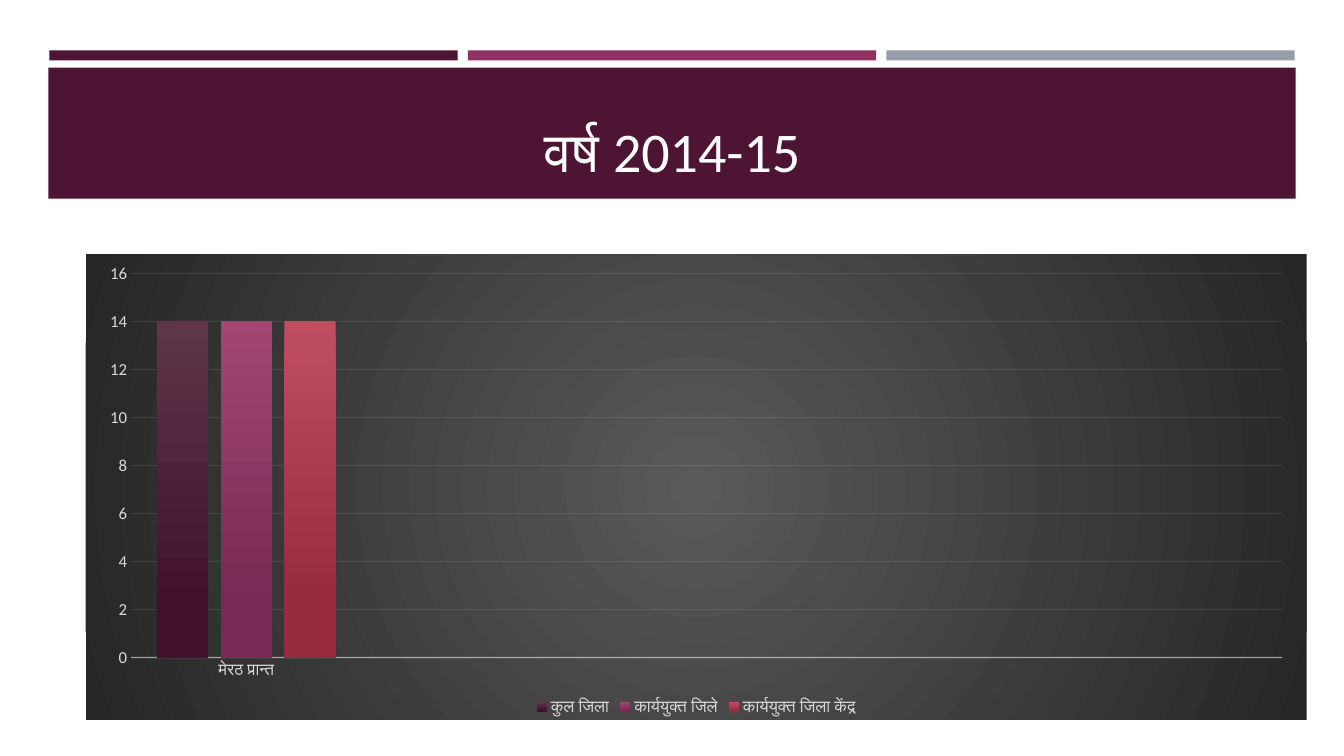
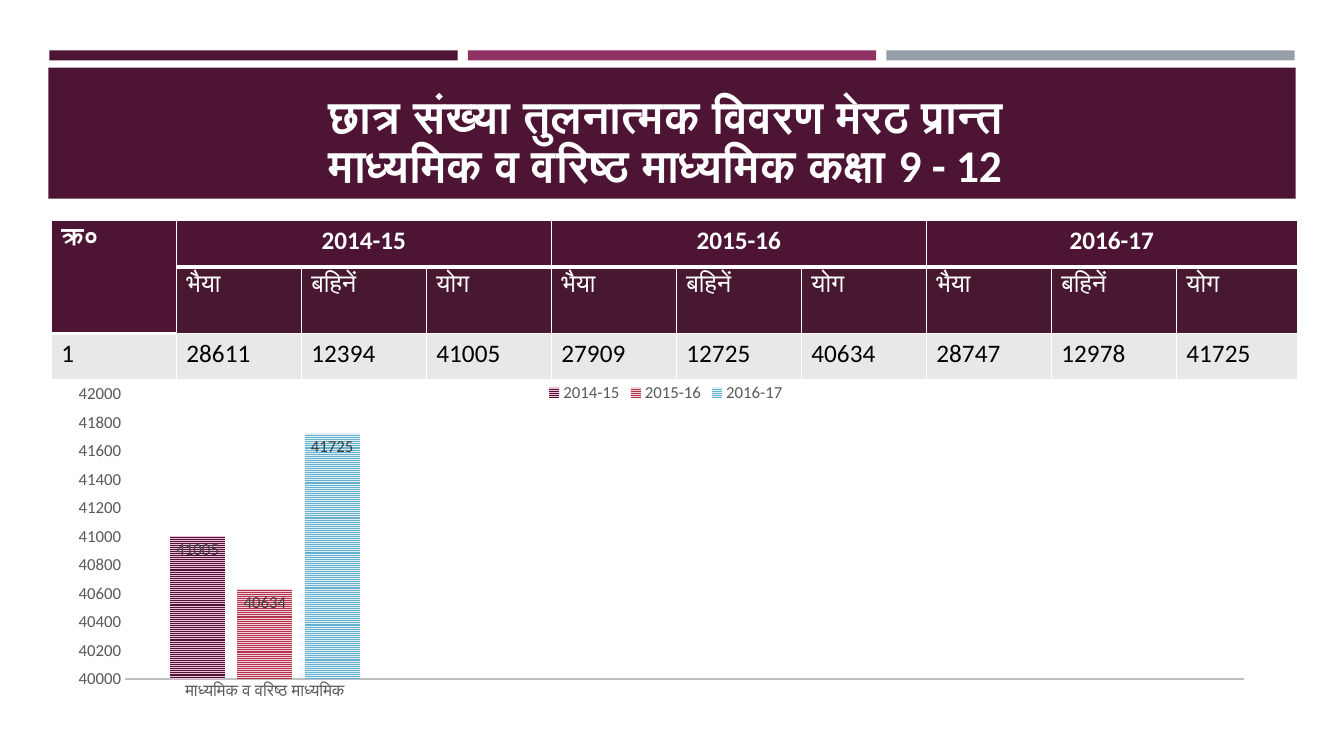
import pptx
import pptx.chart.data
import pptx.dml.color
import pptx.enum.chart
import pptx.enum.dml
import pptx.enum.shapes
import pptx.enum.text
import pptx.oxml
import pptx.oxml.ns
import pptx.util

Inches = pptx.util.Inches
Pt = pptx.util.Pt
RGBColor = pptx.dml.color.RGBColor
PP_ALIGN = pptx.enum.text.PP_ALIGN
ANCHOR = pptx.enum.text.MSO_ANCHOR
CHART = pptx.enum.chart

FONT = "Calibri"
PLUM = RGBColor(0x4D, 0x14, 0x34)
MAGENTA = RGBColor(0x90, 0x31, 0x63)
SLATE = RGBColor(0x96, 0x9F, 0xA7)
SUBHEAD = RGBColor(0x48, 0x18, 0x31)
ROW_TINT = RGBColor(0xE9, 0xE7, 0xE8)
WHITE = RGBColor(0xFF, 0xFF, 0xFF)
BLACK = RGBColor(0x00, 0x00, 0x00)
PALE = RGBColor(0xD9, 0xD9, 0xD9)
RULE = RGBColor(0xF2, 0xF2, 0xF2)
GREY = RGBColor(0x59, 0x59, 0x59)
AXIS_GREY = RGBColor(0xBF, 0xBF, 0xBF)
LABEL_GREY = RGBColor(0x40, 0x40, 0x40)
NIGHT = RGBColor(0x26, 0x26, 0x26)

DISTRICTS = [
    ("कुल जिला", 14, RGBColor(0x5F, 0x36, 0x49), RGBColor(0x41, 0x11, 0x2C)),
    ("कार्ययुक्त जिले", 14, RGBColor(0xA2, 0x47, 0x74), RGBColor(0x79, 0x29, 0x53)),
    ("कार्ययुक्त जिला केंद्र", 14, RGBColor(0xBF, 0x4E, 0x61), RGBColor(0x96, 0x2A, 0x3F)),
]
YEARS = [
    ("2014-15", (28611, 12394, 41005), PLUM, RGBColor(0xEE, 0xBD, 0xD9)),
    ("2015-16", (27909, 12725, 40634), RGBColor(0xB2, 0x32, 0x4B), RGBColor(0xF3, 0xD3, 0xD9)),
    ("2016-17", (28747, 12978, 41725), RGBColor(0x66, 0xB1, 0xCE), RGBColor(0xE0, 0xEF, 0xF5)),
]
STUDENT_GROUPS = ("भैया", "बहिनें", "योग")


def apply(target, **values):
    """Set each named format value on the target."""
    for name, value in values.items():
        setattr(target, name, value)


def set_font(font, size, colour, bold=False):
    """Give a font the shared typeface with a size and colour."""
    apply(font, name=FONT, size=Pt(size), bold=bold)
    font.color.rgb = colour


def xml(markup):
    """Parse markup that uses the drawing and chart prefixes."""
    head, rest = markup.split(" ", 1)
    return pptx.oxml.parse_xml(f"{head} {pptx.oxml.ns.nsdecls('a', 'c')} {rest}")


def add_bands(slide, layout):
    """Draw the three stripes and title band and move them to the layout."""
    bands = [(0.49 + 4.15 * i, 0.5, 4.05, 0.1, colour)
             for i, colour in enumerate((PLUM, MAGENTA, SLATE))]
    bands.append((0.48, 0.67, 12.37, 1.3, PLUM))
    for position, (*box, colour) in enumerate(bands, 2):
        band = slide.shapes.add_shape(
            pptx.enum.shapes.MSO_SHAPE.RECTANGLE, *map(Inches, box))
        band.shadow.inherit = False
        band.fill.solid()
        band.fill.fore_color.rgb = colour
        band.line.fill.background()
        layout.shapes._spTree.insert(position, band._element)


def set_title(slide, box, text, size, bold=False):
    """Place the slide title in its box over the band."""
    title = slide.shapes.title
    left, top, width, height = map(Inches, box)
    apply(title, left=left, top=top, width=width, height=height)
    frame = title.text_frame
    apply(frame, text=text, word_wrap=True, vertical_anchor=ANCHOR.BOTTOM,
          auto_size=pptx.enum.text.MSO_AUTO_SIZE.NONE)
    paragraph = frame.paragraphs[0]
    apply(paragraph, alignment=PP_ALIGN.CENTER, line_spacing=0.9)
    set_font(paragraph.font, size, WHITE, bold)
    for run in paragraph.runs:
        set_font(run.font, size, WHITE, bold)


def add_columns(slide, box, categories, series, scale, spacing, text_colour, legend_at):
    """Add a clustered column chart with shared axis and legend styling."""
    data = pptx.chart.data.CategoryChartData()
    data.categories = categories
    for name, value in series:
        data.add_series(name, [value] + [None] * (len(categories) - 1))
    chart = slide.shapes.add_chart(
        CHART.XL_CHART_TYPE.COLUMN_CLUSTERED, *map(Inches, box), data).chart
    apply(chart, has_title=False, has_legend=True)
    set_font(chart.font, 10, BLACK)
    apply(chart.legend, position=legend_at, include_in_layout=False)
    set_font(chart.legend.font, 12, text_colour)
    gap, overlap = spacing
    apply(chart.plots[0], gap_width=gap, overlap=overlap, vary_by_categories=False)
    for axis in (chart.category_axis, chart.value_axis):
        apply(axis, major_tick_mark=CHART.XL_TICK_MARK.NONE,
              minor_tick_mark=CHART.XL_TICK_MARK.NONE, has_major_gridlines=False)
        set_font(axis.tick_labels.font, 12, text_colour)
    low, high, step = scale
    apply(chart.value_axis, minimum_scale=low, maximum_scale=high, major_unit=step)
    chart.value_axis.format.line.fill.background()
    return chart


def style_line(line, colour, width):
    """Colour a chart line and set its width."""
    line.color.rgb = colour
    line.width = Pt(width)


def set_alpha(axis, line_parent, percent):
    """Make a line of an axis partly transparent."""
    for colour in axis._element.xpath(f"{line_parent}c:spPr/a:ln//a:srgbClr"):
        colour.append(xml(f'<a:alpha val="{percent * 1000}"/>'))


def add_district_chart(slide, box):
    """Chart the districts on a dark radial background."""
    chart = add_columns(
        slide, box, ["मेरठ प्रान्त", "", "", "", ""], [row[:2] for row in DISTRICTS],
        (0, 16, 2), (100, -24), PALE, CHART.XL_LEGEND_POSITION.BOTTOM)
    chart._chartSpace.xpath("c:chart")[0].addnext(xml(
        '<c:spPr ><a:gradFill><a:gsLst>'
        f'<a:gs pos="0"><a:srgbClr val="{GREY}"/></a:gs>'
        f'<a:gs pos="100000"><a:srgbClr val="{NIGHT}"/></a:gs></a:gsLst>'
        '<a:path path="circle"><a:fillToRect l="50000" t="50000" r="50000" b="50000"/>'
        '</a:path></a:gradFill><a:ln><a:noFill/></a:ln></c:spPr>'))
    style_line(chart.category_axis.format.line, RULE, 1)
    set_alpha(chart.category_axis, "", 54)
    chart.value_axis.has_major_gridlines = True
    style_line(chart.value_axis.major_gridlines.format.line, RULE, 0.75)
    set_alpha(chart.value_axis, "c:majorGridlines/", 10)
    for column, (_, _, light, dark) in zip(chart.plots[0].series, DISTRICTS):
        fill = column.format.fill
        fill.gradient()
        fill.gradient_angle = 270
        for stop, colour, position in zip(fill.gradient_stops, (light, dark), (0, 0.84)):
            stop.color.rgb = colour
            stop.position = position


def add_student_chart(slide, box):
    """Chart the yearly student totals with patterned columns."""
    chart = add_columns(
        slide, box, ["माध्यमिक व वरिष्ठ माध्यमिक", "", "", ""],
        [(year, counts[-1]) for year, counts, _, _ in YEARS],
        (40000, 42000, 200), (164, -22), GREY, CHART.XL_LEGEND_POSITION.TOP)
    style_line(chart.category_axis.format.line, AXIS_GREY, 1.5)
    plot_area = chart._chartSpace.xpath("c:chart/c:plotArea")[0]
    for layout in plot_area.xpath("c:layout"):
        plot_area.remove(layout)
    places = "".join(f'<c:{name} val="{value}"/>' for name, value in (
        ("layoutTarget", "inner"), ("xMode", "edge"), ("yMode", "edge"),
        ("x", 0.06), ("y", 0.06), ("w", 0.91), ("h", 0.74)))
    plot_area.insert(0, xml(
        f"<c:layout ><c:manualLayout>{places}</c:manualLayout></c:layout>"))
    for column, (_, _, front, back) in zip(chart.plots[0].series, YEARS):
        fill = column.format.fill
        fill.patterned()
        fill.pattern = pptx.enum.dml.MSO_PATTERN.NARROW_HORIZONTAL
        fill.fore_color.rgb = front
        fill.back_color.rgb = back
        labels = column.data_labels
        apply(labels, show_value=True, position=CHART.XL_LABEL_POSITION.INSIDE_END)
        set_font(labels.font, 12, LABEL_GREY)


def style_cell(cell, text, fill, colour, bold, align, bottom):
    """Write a table cell with its fill, font and white borders."""
    cell.text = text
    paragraph = cell.text_frame.paragraphs[0]
    paragraph.alignment = align
    for run in paragraph.runs:
        set_font(run.font, 18, colour, bold)
    cell.fill.solid()
    cell.fill.fore_color.rgb = fill
    properties = cell._tc.get_or_add_tcPr()
    for position, (side, width) in enumerate(zip("LRTB", (1, 1, 1, bottom))):
        properties.insert(position, xml(
            f'<a:ln{side} w="{Pt(width)}"><a:solidFill><a:srgbClr val="{WHITE}"/>'
            f'</a:solidFill></a:ln{side}>'))


def add_student_table(slide, box):
    """Add the table of students by year and group."""
    years = [text for year, *_ in YEARS for text in (year, "", "")]
    counts = [str(count) for _, group, _, _ in YEARS for count in group]
    rows = [
        (["क्र०"] + years, PLUM, WHITE, True, 3),
        ([""] + list(STUDENT_GROUPS) * len(YEARS), SUBHEAD, WHITE, False, 1),
        (["1"] + counts, ROW_TINT, BLACK, False, 1),
    ]
    table = slide.shapes.add_table(len(rows), len(counts) + 1, *map(Inches, box)).table
    for column in table.columns:
        column.width = Inches(1.24)
    table.columns[len(counts)].width = Inches(box[2] - 1.24 * len(counts))
    for row, height in zip(table.rows, (0.46, 0.66, 0.46)):
        row.height = Inches(height)
    for r, (texts, fill, colour, bold, bottom) in enumerate(rows):
        for c, text in enumerate(texts):
            align = PP_ALIGN.CENTER if r == 0 and c else PP_ALIGN.LEFT
            cell_fill = PLUM if r == 1 and c == 0 else fill
            style_cell(table.cell(r, c), text, cell_fill, colour, bold, align, bottom)
    table.cell(0, 0).merge(table.cell(1, 0))
    for first in range(1, len(counts), len(STUDENT_GROUPS)):
        table.cell(0, first).merge(table.cell(0, first + len(STUDENT_GROUPS) - 1))


def main():
    """Build and save the two slides."""
    deck = pptx.Presentation()
    apply(deck, slide_width=Inches(13.33), slide_height=Inches(7.5))
    layout = deck.slide_layouts[5]

    districts = deck.slides.add_slide(layout)
    add_bands(districts, layout)
    set_title(districts, (0.64, 0.77, 12.06, 1.11), "वर्ष 2014-15", 40)
    add_district_chart(districts, (0.85, 2.52, 12.11, 4.62))

    students = deck.slides.add_slide(layout)
    set_title(students, (0.57, 0.73, 12.06, 1.23),
              "छात्र संख्या तुलनात्मक विवरण मेरठ प्रान्त\vमाध्यमिक व वरिष्ठ माध्यमिक कक्षा 9 - 12",
              32.4, True)
    add_student_table(students, (0.51, 2.19, 12.36, 1.58))
    add_student_chart(students, (0.51, 3.68, 12.19, 3.82))

    deck.save("out.pptx")


if __name__ == "__main__":
    main()
